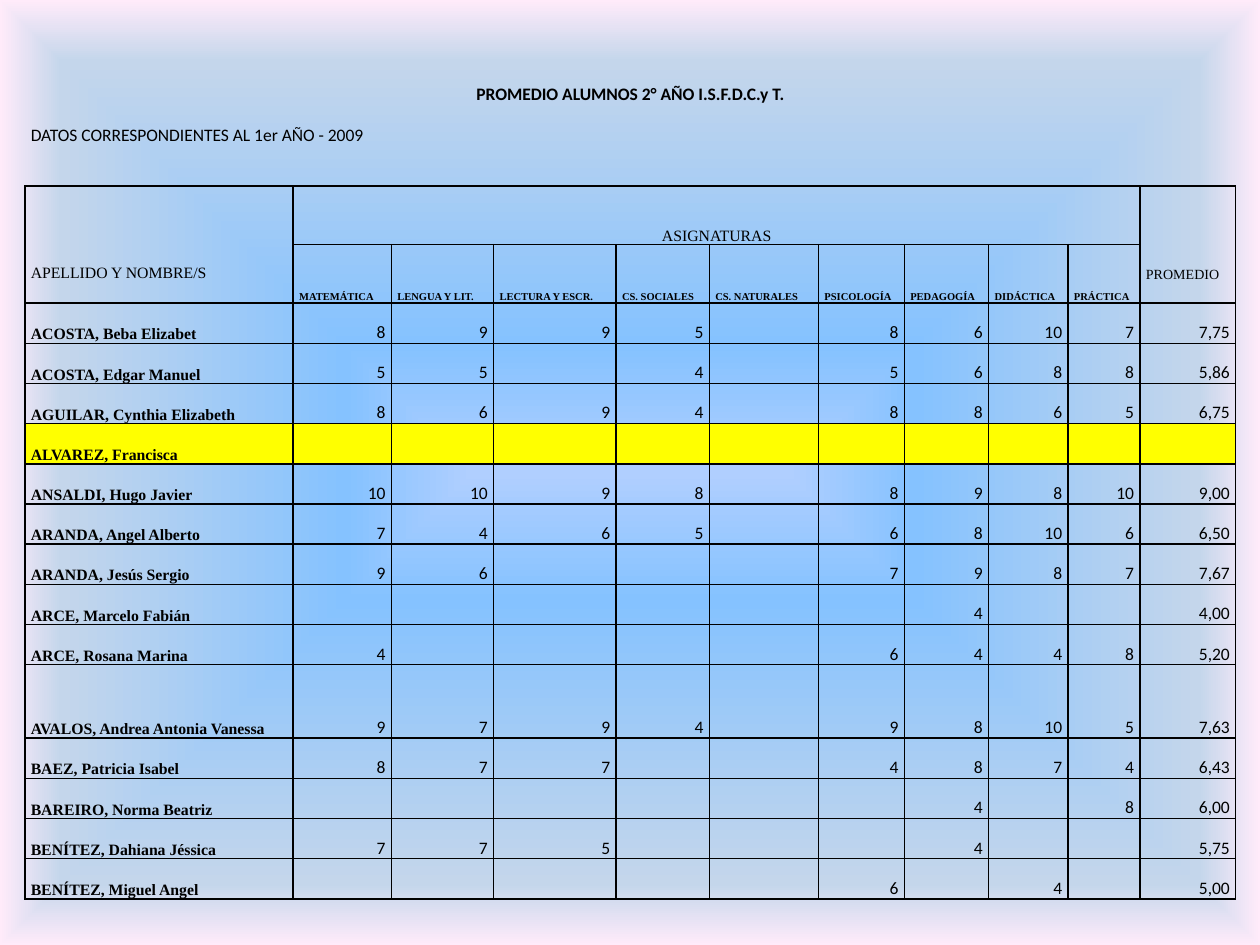
from lxml.etree import SubElement
from pptx import Presentation
from pptx.dml.color import RGBColor as RGB
from pptx.enum.text import MSO_ANCHOR as Anchor, PP_ALIGN as Align
from pptx.oxml.ns import qn
from pptx.util import Cm, Pt

COLORS = {"ink": "000000", "highlight": "FFFF00", "center": "B0CFFF",
          "sky": "85C2FF", "mist": "C4D6EB", "edge": "FFEBFA"}
NO_GRID_STYLE = "{2D5ABB26-0587-4C30-8999-92F81FD0307C}"
SANS, SERIF = "Calibri", "Times New Roman"
COL_WIDTHS = [5.41, 1.98, 2.06, 2.47, 1.88, 2.2, 1.73, 1.7, 1.6, 1.45, 1.93]
ROW_HEIGHT, HEADER_HEIGHT, TALL_HEIGHT = 0.81, 1.18, 1.48
HEADER_ROW, SUBJECT_ROW, FIRST_STUDENT = 3, 4, 5
SUBJECTS = ["MATEMÁTICA", "LENGUA Y LIT.", "LECTURA Y ESCR.", "CS. SOCIALES",
            "CS. NATURALES", "PSICOLOGÍA", "PEDAGOGÍA", "DIDÁCTICA", "PRÁCTICA"]
ABSENT = "ALVAREZ, Francisca"
TALL = "AVALOS, Andrea Antonia Vanessa"
STUDENTS = [
    ("ACOSTA, Beba Elizabet", "8 9 9 5 - 8 6 10 7 7,75"),
    ("ACOSTA, Edgar Manuel", "5 5 - 4 - 5 6 8 8 5,86"),
    ("AGUILAR, Cynthia Elizabeth", "8 6 9 4 - 8 8 6 5 6,75"),
    (ABSENT, "- - - - - - - - - -"),
    ("ANSALDI, Hugo Javier", "10 10 9 8 - 8 9 8 10 9,00"),
    ("ARANDA, Angel Alberto", "7 4 6 5 - 6 8 10 6 6,50"),
    ("ARANDA, Jesús Sergio", "9 6 - - - 7 9 8 7 7,67"),
    ("ARCE, Marcelo Fabián", "- - - - - - 4 - - 4,00"),
    ("ARCE, Rosana Marina", "4 - - - - 6 4 4 8 5,20"),
    (TALL, "9 7 9 4 - 9 8 10 5 7,63"),
    ("BAEZ, Patricia Isabel", "8 7 7 - - 4 8 7 4 6,43"),
    ("BAREIRO, Norma Beatriz", "- - - - - - 4 - 8 6,00"),
    ("BENÍTEZ, Dahiana Jéssica", "7 7 5 - - - 4 - - 5,75"),
    ("BENÍTEZ, Miguel Angel", "- - - - - 6 - 4 - 5,00"),
]


class GradeSlide:
    def __init__(self, prs):
        self.s = prs.slides.add_slide(prs.slide_layouts[6])

    def background(self, stops):
        self.s.background.fill.gradient()
        grad = self.s._element.find(".//" + qn("a:gradFill"))
        for child in list(grad):
            grad.remove(child)
        gs_list = SubElement(grad, qn("a:gsLst"))
        for pos, color, alpha in stops:
            gs = SubElement(gs_list, qn("a:gs"), pos=str(pos * 1000))
            clr = SubElement(gs, qn("a:srgbClr"), val=COLORS[color])
            if alpha < 100:
                SubElement(clr, qn("a:alpha"), val=str(alpha * 1000))
        shape_path = SubElement(grad, qn("a:path"), path="shape")
        SubElement(shape_path, qn("a:fillToRect"),
                   l="50000", t="50000", r="50000", b="50000")

    def table(self, left, top, widths, heights):
        frame = self.s.shapes.add_table(
            len(heights), len(widths), Cm(left), Cm(top),
            Cm(sum(widths)), Cm(sum(heights)))
        self.tbl = frame.table
        self.tbl.first_row = self.tbl.horz_banding = False
        frame._element.find(".//" + qn("a:tableStyleId")).text = NO_GRID_STYLE
        for col, width in zip(self.tbl.columns, widths):
            col.width = Cm(width)
        for row, height in zip(self.tbl.rows, heights):
            row.height = Cm(height)

    def borders(self, cell, sides):
        tc_pr = cell._tc.get_or_add_tcPr()
        for side in sides:
            ln = SubElement(tc_pr, qn("a:ln" + side), w=str(Pt(1)))
            fill = SubElement(ln, qn("a:solidFill"))
            SubElement(fill, qn("a:srgbClr"), val=COLORS["ink"])

    def base_cell(self, row, col, sides, fill=None):
        cell = self.tbl.cell(row, col)
        self.borders(cell, sides)
        if fill:
            cell.fill.solid()
            cell.fill.fore_color.rgb = RGB.from_string(COLORS[fill])
        else:
            cell.fill.background()
        cell.margin_left = cell.margin_right = Cm(0.12)
        cell.margin_top = cell.margin_bottom = 0
        cell.vertical_anchor = Anchor.BOTTOM
        SubElement(cell.text_frame.paragraphs[0]._p, qn("a:endParaRPr"), sz="1000")

    def text(self, row, col, text, size=10, font=SANS, bold=False,
             align=Align.LEFT, bottom=0):
        cell = self.tbl.cell(row, col)
        cell.margin_bottom = Cm(bottom)
        p = cell.text_frame.paragraphs[0]
        p.add_run().text = text
        p.alignment = align
        p.line_spacing = 1.15
        p.font.size, p.font.name, p.font.bold = Pt(size), font, bold
        p.font.color.rgb = RGB.from_string(COLORS["ink"])

    def merge(self, first, last):
        self.tbl.cell(*first).merge(self.tbl.cell(*last))


def main():
    prs = Presentation()
    prs.slide_width, prs.slide_height = Cm(25.4), Cm(19.05)
    slide = GradeSlide(prs)
    slide.background([(0, "center", 66), (27, "sky", 100),
                      (87, "mist", 100), (100, "edge", 100)])

    heights = [ROW_HEIGHT] * HEADER_ROW + [HEADER_HEIGHT] * 2
    heights += [TALL_HEIGHT if name == TALL else ROW_HEIGHT for name, _ in STUDENTS]
    slide.table(0.5, 1.32, COL_WIDTHS, heights)

    absent_row = FIRST_STUDENT + [name for name, _ in STUDENTS].index(ABSENT)
    last_col = len(COL_WIDTHS) - 1
    for row in range(len(heights)):
        sides = "LRTB" if row >= HEADER_ROW else "B" if row == HEADER_ROW - 1 else ""
        for col in range(len(COL_WIDTHS)):
            slide.base_cell(row, col, sides,
                            "highlight" if row == absent_row else None)

    for row in (0, 1):
        slide.merge((row, 0), (row, last_col))
    for col in (0, last_col):
        slide.merge((HEADER_ROW, col), (SUBJECT_ROW, col))
    slide.merge((HEADER_ROW, 1), (HEADER_ROW, last_col - 1))

    slide.text(0, 0, "PROMEDIO ALUMNOS 2° AÑO I.S.F.D.C.y T.",
               bold=True, align=Align.CENTER)
    slide.text(1, 0, "DATOS CORRESPONDIENTES AL 1er AÑO - 2009")
    slide.text(HEADER_ROW, 0, "APELLIDO Y NOMBRE/S", 9, SERIF, bottom=0.42)
    slide.text(HEADER_ROW, 1, "ASIGNATURAS", 9, SERIF, align=Align.CENTER)
    slide.text(HEADER_ROW, last_col, "PROMEDIO", 8, SERIF, bottom=0.42)
    for col, subject in enumerate(SUBJECTS, 1):
        slide.text(SUBJECT_ROW, col, subject, 6, SERIF, bold=True)

    for row, (name, grades) in enumerate(STUDENTS, FIRST_STUDENT):
        slide.text(row, 0, name, 9, SERIF, bold=True)
        for col, grade in enumerate(grades.split(), 1):
            if grade != "-":
                slide.text(row, col, grade, align=Align.RIGHT)

    prs.save("out.pptx")


if __name__ == "__main__":
    main()
